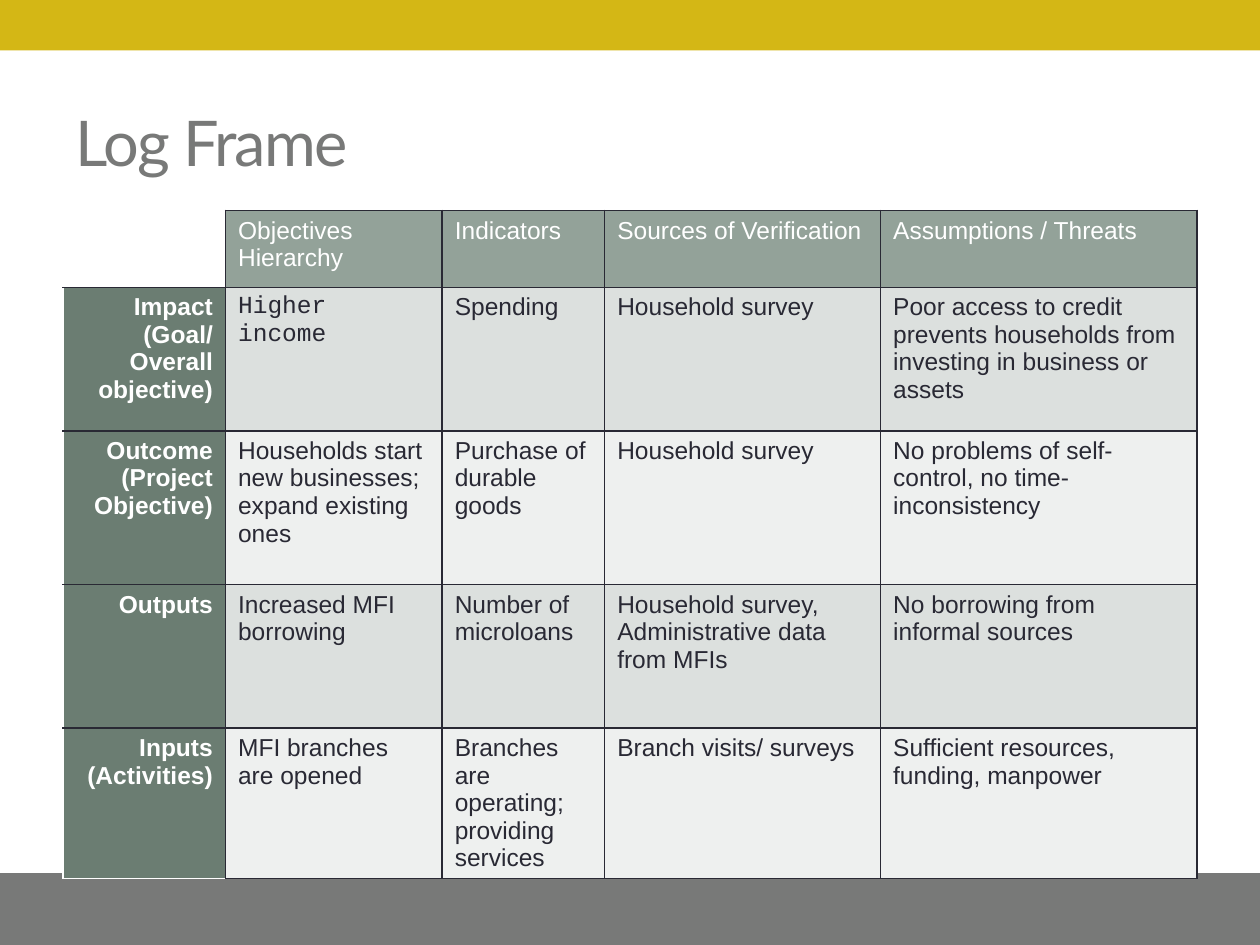
from lxml.etree import SubElement
from pptx import Presentation
from pptx.dml.color import RGBColor
from pptx.enum.shapes import MSO_SHAPE
from pptx.enum.text import MSO_ANCHOR, PP_ALIGN
from pptx.oxml import parse_xml
from pptx.oxml.ns import nsdecls, qn
from pptx.util import Inches, Pt

COLORS = {
    "gold": "D4B715",
    "gray": "787978",
    "ink": "292934",
    "white": "FFFFFF",
    "header": "93A299",
    "side": "6B7D72",
    "odd": "DCE0DE",
    "even": "EEF0EF",
}
ROWS = [
    ["", "Objectives Hierarchy", "Indicators", "Sources of Verification", "Assumptions / Threats"],
    ["Impact\n(Goal/ Overall objective)", "Higher income", "Spending", "Household survey",
     "Poor access to credit prevents households from investing in business or assets"],
    ["Outcome\n(Project Objective)", "Households start new businesses; expand existing ones",
     "Purchase of durable goods", "Household survey",
     "No problems of self-control, no time-inconsistency"],
    ["Outputs", "Increased MFI borrowing", "Number of microloans",
     "Household survey, Administrative data from MFIs", "No borrowing from informal sources"],
    ["Inputs\n(Activities)", "MFI branches are opened",
     "Branches are operating; providing services", "Branch visits/ surveys",
     "Sufficient resources, funding, manpower"],
]
COLUMN_WIDTHS = [1.29, 1.72, 1.29, 2.19, 2.51]
ROW_HEIGHTS = [0.61, 1.14, 1.22, 1.14, 0.99]


def write(frame, text, *, size=14, font="Arial", color="ink", bold=False,
          align=PP_ALIGN.LEFT, spacing=None):
    for index, line in enumerate(text.split("\n")):
        para = frame.add_paragraph() if index else frame.paragraphs[0]
        para.alignment = align
        span = para.add_run()
        span.text = line
        span.font.size = Pt(size)
        span.font.name = font
        span.font.bold = bold
        span.font.color.rgb = RGBColor.from_string(COLORS[color])
        if spacing is not None:
            span.font._element.set("spc", str(spacing * 100))


def set_borders(cell, **sides):
    properties = cell._tc.get_or_add_tcPr()
    for index, (side, color) in enumerate(sides.items()):
        line = parse_xml(f'<a:ln{side} {nsdecls("a")} w="{Pt(1)}"/>')
        fill = SubElement(line, qn("a:solidFill"))
        SubElement(fill, qn("a:srgbClr"), val=COLORS[color])
        properties.insert(index, line)


deck = Presentation()
deck.slide_width, deck.slide_height = Inches(10), Inches(7.5)
page = deck.slides.add_slide(deck.slide_layouts[5])

title = page.shapes.title
for left, top, width, height, color in [
    (0, 0, 10, 0.4, "gold"),
    (-0.03, 6.93, 10.12, 0.6, "gray"),
]:
    band = page.shapes.add_shape(
        MSO_SHAPE.RECTANGLE, Inches(left), Inches(top), Inches(width), Inches(height))
    band.shadow.inherit = False
    band.fill.solid()
    band.fill.fore_color.rgb = RGBColor.from_string(COLORS[color])
    band.line.fill.background()
    title._element.addprevious(band._element)

title.left, title.top = Inches(0.5), Inches(0.58)
title.width, title.height = Inches(9), Inches(1.08)
title.text_frame.vertical_anchor = MSO_ANCHOR.MIDDLE
write(title.text_frame, "Log Frame", size=36, font="Lato", color="gray", spacing=-1)

table = page.shapes.add_table(
    len(ROWS), len(COLUMN_WIDTHS), Inches(0.5), Inches(1.67),
    Inches(sum(COLUMN_WIDTHS)), Inches(sum(ROW_HEIGHTS))).table
for column, width in zip(table.columns, COLUMN_WIDTHS):
    column.width = Inches(width)
for row, height in zip(table.rows, ROW_HEIGHTS):
    row.height = Inches(height)

last_row = len(ROWS) - 1
for r, texts in enumerate(ROWS):
    for c, text in enumerate(texts):
        cell = table.cell(r, c)
        side = c == 0
        if text:
            shade = "side" if side else "header" if r == 0 else "odd" if r % 2 else "even"
            cell.fill.solid()
            cell.fill.fore_color.rgb = RGBColor.from_string(COLORS[shade])
            write(cell.text_frame, text, bold=side,
                  font="Courier New" if text == "Higher income" else "Arial",
                  color="white" if side or r == 0 else "ink",
                  align=PP_ALIGN.RIGHT if side else PP_ALIGN.LEFT)
        else:
            cell.fill.background()
        set_borders(cell,
                    L="white" if side else "ink",
                    R="ink",
                    T="white" if side and r == 0 else "ink",
                    B="white" if side and r == last_row else "ink")

deck.save("out.pptx")
